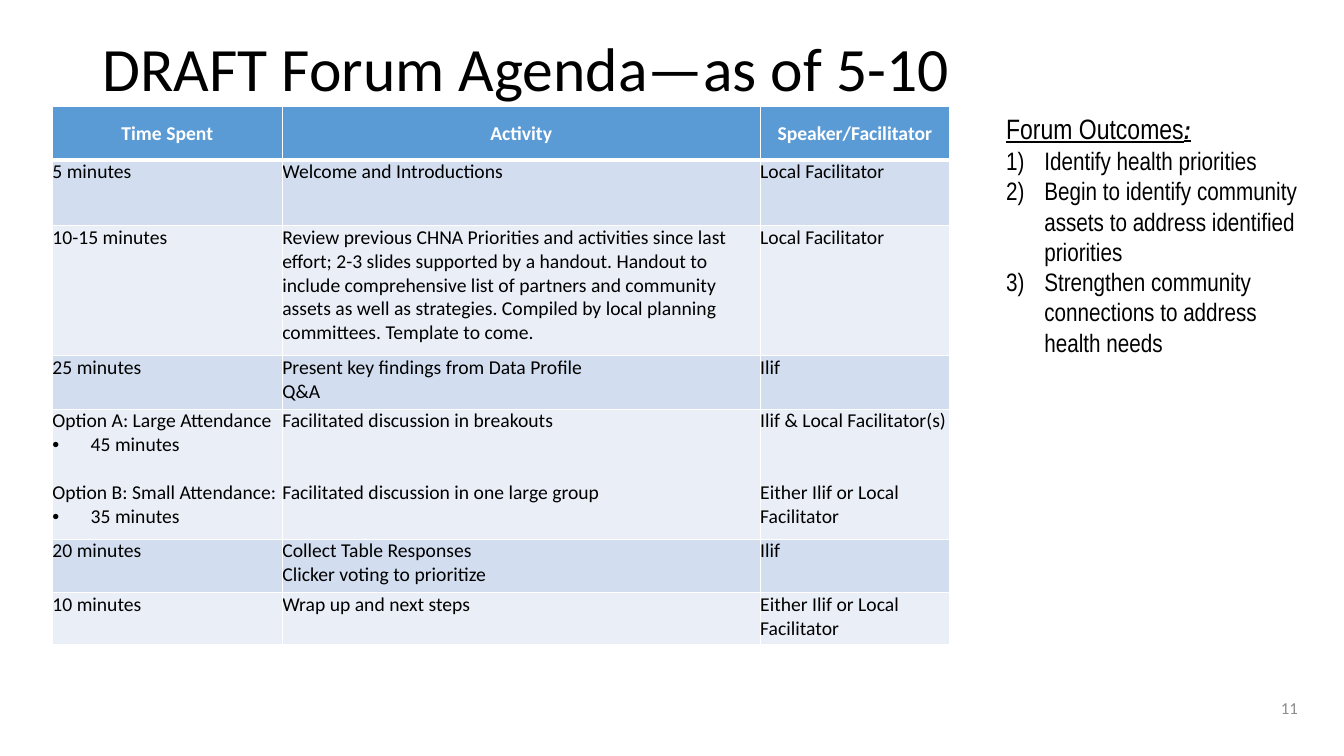
import pptx
import pptx.dml.color
import pptx.enum.text
import pptx.oxml
import pptx.oxml.ns
import pptx.util
from lxml import etree

Inches = pptx.util.Inches
Pt = pptx.util.Pt
ALIGN = pptx.enum.text.PP_ALIGN
ANCHOR = pptx.enum.text.MSO_ANCHOR
COLORS = {
    "text": "000000",
    "white": "FFFFFF",
    "header": "5B9BD5",
    "band_dark": "D2DEEF",
    "band_light": "EAEFF7",
    "number": "8C8C8C",
}


def format_run(run, size, color, font="Calibri", bold=False):
    run.font.name = font
    run.font.size = Pt(size)
    run.font.bold = bold
    run.font.color.rgb = pptx.dml.color.RGBColor.from_string(COLORS[color])


def add_marker(paragraph, tag, **attributes):
    properties = paragraph._p.get_or_add_pPr()
    properties.set("marL", str(Inches(0.38)))
    properties.set("indent", str(-Inches(0.38)))
    if tag == "a:buChar":
        bullet_font = etree.SubElement(properties, pptx.oxml.ns.qn("a:buFont"))
        bullet_font.set("typeface", "Arial")
    etree.SubElement(properties, pptx.oxml.ns.qn(tag), attributes)


presentation = pptx.Presentation()
presentation.slide_width = Inches(13.33)
presentation.slide_height = Inches(7.5)
slide = presentation.slides.add_slide(presentation.slide_layouts[6])

number_box = slide.shapes.add_textbox(Inches(12.55), Inches(6.82), Inches(0.42), Inches(0.4))
number_box.text_frame.text = "11"
number_box.text_frame.word_wrap = True
number_box.text_frame.vertical_anchor = ANCHOR.MIDDLE
paragraph = number_box.text_frame.paragraphs[0]
paragraph.alignment = ALIGN.RIGHT
format_run(paragraph.runs[0], 12, "number")

title_box = slide.shapes.add_textbox(Inches(0.92), Inches(0.33), Inches(11.5), Inches(1.45))
title_box.text_frame.text = "DRAFT Forum Agenda—as of 5-10"
title_box.text_frame.word_wrap = True
paragraph = title_box.text_frame.paragraphs[0]
paragraph.line_spacing = 0.9
format_run(paragraph.runs[0], 44, "text")

agenda = [
    ("Time Spent", "Activity", "Speaker/Facilitator"),
    ("5 minutes", "Welcome and Introductions", "Local Facilitator"),
    (
        "10-15 minutes",
        "Review previous CHNA Priorities and activities since last effort; 2-3 slides "
        "supported by a handout. Handout to include comprehensive list of partners and "
        "community assets as well as strategies. Compiled by local planning committees. "
        "Template to come.",
        "Local Facilitator",
    ),
    ("25 minutes", "Present key findings from Data Profile\nQ&A", "Ilif"),
    (
        "Option A: Large Attendance\n45 minutes\nOption B: Small Attendance:\n35 minutes",
        "Facilitated discussion in breakouts\nFacilitated discussion in one large group",
        "Ilif & Local Facilitator(s)\nEither Ilif or Local Facilitator",
    ),
    ("20 minutes", "Collect Table Responses\nClicker voting to prioritize", "Ilif"),
    ("10 minutes", "Wrap up and next steps", "Either Ilif or Local Facilitator"),
]
column_widths = [2.28, 4.74, 1.88]
row_heights = [0.53, 0.65, 1.29, 0.53, 1.29, 0.53, 0.52]
bullets = {(4, 0, 1), (4, 0, 3)}
option_gaps = {(4, 0, 2): 17, (4, 1, 1): 34, (4, 2, 1): 34}

table = slide.shapes.add_table(
    len(agenda), len(column_widths),
    Inches(0.52), Inches(1.06), Inches(sum(column_widths)), Inches(sum(row_heights)),
).table
for column, width in zip(table.columns, column_widths):
    column.width = Inches(width)
for row, height in zip(table.rows, row_heights):
    row.height = Inches(height)

for row_index, entries in enumerate(agenda):
    is_header = row_index == 0
    band = "header" if is_header else "band_dark" if row_index % 2 else "band_light"
    for column_index, entry in enumerate(entries):
        cell = table.cell(row_index, column_index)
        cell.text_frame.text = entry
        cell.margin_left = cell.margin_right = cell.margin_top = cell.margin_bottom = 0
        cell.vertical_anchor = ANCHOR.MIDDLE if is_header else ANCHOR.TOP
        cell.fill.solid()
        cell.fill.fore_color.rgb = pptx.dml.color.RGBColor.from_string(COLORS[band])
        thick_edge = {0: "B", 1: "T"}.get(row_index)
        for position, edge in enumerate("LRTB"):
            border = pptx.oxml.parse_xml(
                f'<a:ln{edge} {pptx.oxml.ns.nsdecls("a")} w="{Pt(3 if edge == thick_edge else 1)}">'
                f'<a:solidFill><a:srgbClr val="{COLORS["white"]}"/></a:solidFill></a:ln{edge}>'
            )
            cell._tc.get_or_add_tcPr().insert(position, border)
        for line_index, paragraph in enumerate(cell.text_frame.paragraphs):
            place = (row_index, column_index, line_index)
            if place in bullets:
                add_marker(paragraph, "a:buChar", char="•")
            if place in option_gaps:
                paragraph.space_before = Pt(option_gaps[place])
            paragraph.alignment = ALIGN.CENTER if is_header else ALIGN.LEFT
            format_run(paragraph.runs[0], 14, "white" if is_header else "text", bold=is_header)

outcomes_box = slide.shapes.add_textbox(Inches(9.88), Inches(1.06), Inches(3.25), Inches(2.56))
outcomes_frame = outcomes_box.text_frame
outcomes_frame.word_wrap = True
outcomes_frame.auto_size = pptx.enum.text.MSO_AUTO_SIZE.SHAPE_TO_FIT_TEXT
outcomes_frame.text = "Forum Outcomes"
heading = outcomes_frame.paragraphs[0]
heading.add_run().text = ":"
format_run(heading.runs[0], 20, "text", "Arial Narrow")
format_run(heading.runs[1], 18, "text", "Arial Narrow", bold=True)
heading.runs[1].font.italic = True
for run in heading.runs:
    run.font.underline = True

for outcome in [
    "Identify health priorities",
    "Begin to identify community assets to address identified priorities",
    "Strengthen community connections to address health needs",
]:
    paragraph = outcomes_frame.add_paragraph()
    paragraph.text = outcome
    add_marker(paragraph, "a:buAutoNum", type="arabicParenR")
    format_run(paragraph.runs[0], 18, "text", "Arial Narrow")

presentation.save("out.pptx")
